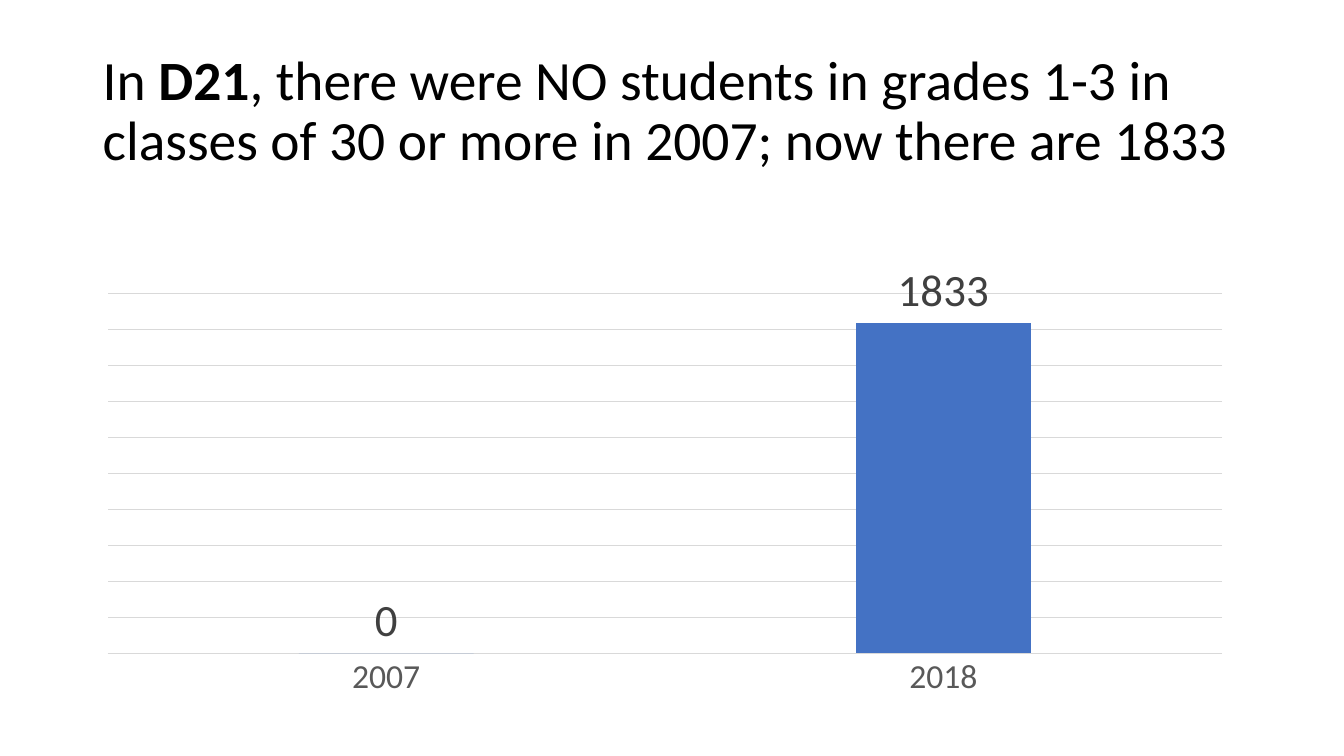
from typing import NamedTuple

from lxml import etree
from pptx import Presentation
from pptx.chart.chart import Chart
from pptx.chart.data import CategoryChartData
from pptx.dml.color import RGBColor
from pptx.enum.chart import XL_CHART_TYPE, XL_LABEL_POSITION, XL_TICK_MARK
from pptx.enum.text import MSO_ANCHOR
from pptx.oxml.ns import qn
from pptx.slide import Slide
from pptx.text.text import Font
from pptx.util import Inches, Pt

COLUMNS = XL_CHART_TYPE.COLUMN_CLUSTERED
OUTSIDE_END = XL_LABEL_POSITION.OUTSIDE_END
NO_TICKS = XL_TICK_MARK.NONE
MIDDLE = MSO_ANCHOR.MIDDLE
FONT_NAME = "Calibri"
GRID_COLOR = "D9D9D9"


class Span(NamedTuple):
    text: str
    bold: bool = False


class Area(NamedTuple):
    x: float
    y: float
    w: float
    h: float


TITLE = (
    Span("In "),
    Span("D21", True),
    Span(", there were NO students in grades 1-3 in classes of 30 or more in 2007; now there are 1833"),
)
TITLE_AREA = Area(0.92, 0.41, 12.15, 1.41)
CHART_AREA = Area(0.92, 2.22, 11.36, 5.07)
PLOT_AREA = Area(0.013, 0.136, 0.973, 0.705)
STUDENTS = {"2007": 0, "2018": 1833}


def color(value: str) -> RGBColor:
    return RGBColor.from_string(value)


def style_font(font: Font, size: float, shade: str, bold: bool = False) -> None:
    font.name = FONT_NAME
    font.size = Pt(size)
    font.color.rgb = color(shade)
    font.bold = bold


def add_title(page: Slide) -> None:
    box = page.shapes.add_textbox(*(Inches(length) for length in TITLE_AREA))
    frame = box.text_frame
    frame.word_wrap = True
    frame.vertical_anchor = MIDDLE
    para = frame.paragraphs[0]
    para.line_spacing = 0.9
    for span in TITLE:
        run = para.add_run()
        run.text = span.text
        style_font(run.font, 39.6, "000000", span.bold)


def place_plot(chart: Chart) -> None:
    plot_area = chart.plots[0]._element.getparent()
    for old_layout in plot_area.findall(qn("c:layout")):
        plot_area.remove(old_layout)
    layout = etree.Element(qn("c:layout"))
    manual = etree.SubElement(layout, qn("c:manualLayout"))
    settings = {"layoutTarget": "inner", "xMode": "edge", "yMode": "edge", **PLOT_AREA._asdict()}
    for name, value in settings.items():
        etree.SubElement(manual, qn(f"c:{name}")).set("val", str(value))
    plot_area.insert(0, layout)


def add_student_chart(page: Slide) -> None:
    data = CategoryChartData()
    data.categories = list(STUDENTS)
    data.add_series("Series 1", list(STUDENTS.values()))
    bounds = (Inches(length) for length in CHART_AREA)
    chart = page.shapes.add_chart(COLUMNS, *bounds, data).chart
    chart.has_legend = False
    chart.has_title = False
    style_font(chart.font, 10, "000000")

    years = chart.category_axis
    years.major_tick_mark = NO_TICKS
    years.minor_tick_mark = NO_TICKS
    style_font(years.tick_labels.font, 24, "595959")

    counts = chart.value_axis
    counts.visible = False
    counts.minimum_scale = 0
    counts.maximum_scale = 2000
    counts.major_unit = 200
    counts.has_major_gridlines = True
    for line in (years.format.line, counts.major_gridlines.format.line):
        line.color.rgb = color(GRID_COLOR)
        line.width = Pt(0.75)

    plot = chart.plots[0]
    plot.gap_width = 219
    plot.overlap = -27
    plot.vary_by_categories = False
    fill = plot.series[0].format.fill
    fill.solid()
    fill.fore_color.rgb = color("4472C4")
    labels = plot.series[0].data_labels
    labels.show_value = True
    labels.position = OUTSIDE_END
    style_font(labels.font, 32, "404040")
    place_plot(chart)


def main() -> None:
    deck = Presentation()
    deck.slide_width = Inches(13.33)
    deck.slide_height = Inches(7.5)
    page = deck.slides.add_slide(deck.slide_layouts[6])
    add_title(page)
    add_student_chart(page)
    deck.save("out.pptx")


if __name__ == "__main__":
    main()
